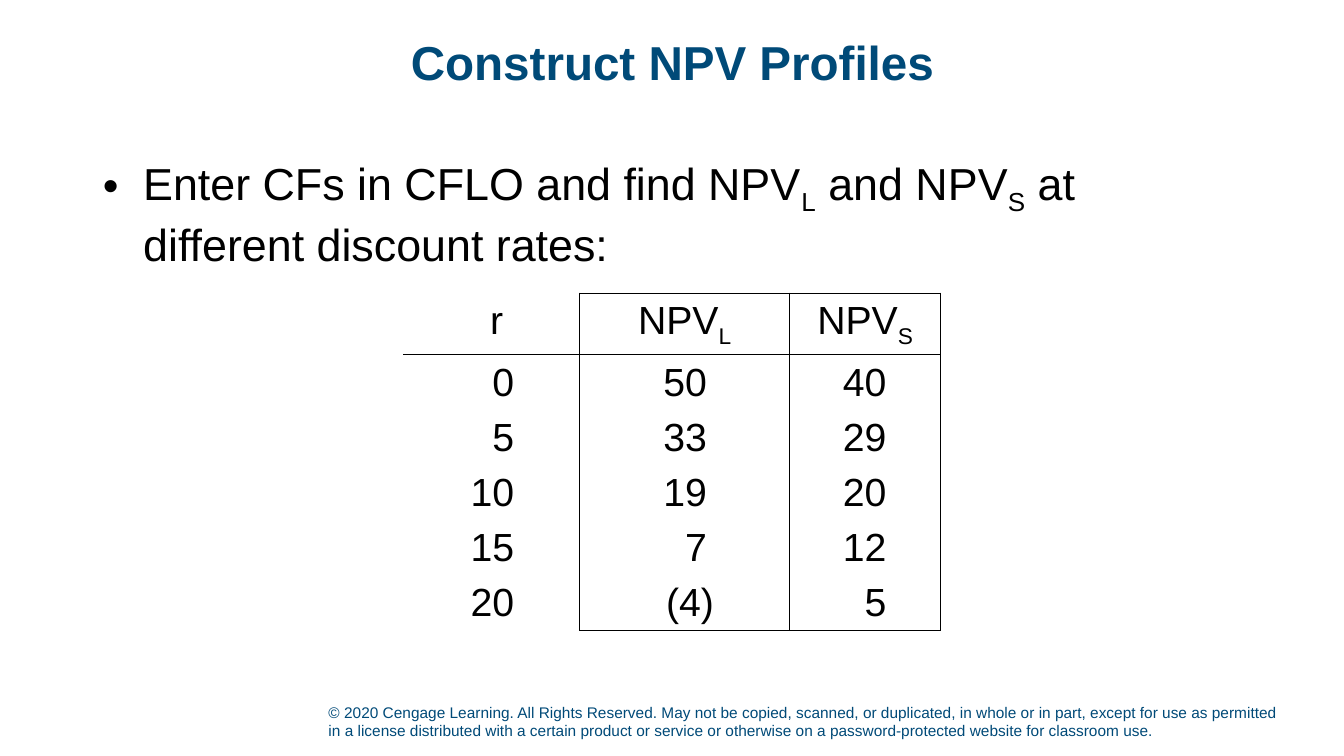
"""Build the NPV profiles slide."""
import pptx
import pptx.dml.color
import pptx.enum.text
import pptx.oxml.ns
import pptx.util
from lxml import etree

Inches = pptx.util.Inches
Pt = pptx.util.Pt
Align = pptx.enum.text.PP_ALIGN
Anchor = pptx.enum.text.MSO_ANCHOR
qn = pptx.oxml.ns.qn

BLUE = pptx.dml.color.RGBColor(0x00, 0x4A, 0x78)
BLACK = pptx.dml.color.RGBColor(0x00, 0x00, 0x00)
FONT = "Arial"

COPYRIGHT = (
    "© 2020 Cengage Learning. All Rights Reserved. May not be copied, scanned, "
    "or duplicated, in whole or in part, except for use as permitted in a license "
    "distributed with a certain product or service or otherwise on a "
    "password-protected website for classroom use."
)
PROMPT = ["Enter CFs in CFLO and find NPV", "L", " and NPV", "S", " at different discount rates:"]
HEADINGS = [["r"], ["NPV", "L"], ["NPV", "S"]]
RATE_ROWS = [
    ("0", "50", "40"),
    ("5", "33", "29"),
    ("10", "19", "20"),
    ("15", "7", "12"),
    ("20", "(4)", "5"),
]
COLUMN_WIDTHS = [1.75, 2.08, 1.5]
NUMBER_MARGINS = [0.65, 0.82, 0.54]
PARENTHESIS_HANG = 0.07
HEADING_HEIGHT = 0.6
ROW_HEIGHT = 0.53


def set_values(target, values):
    """Set each named attribute of the target."""
    for name, value in values.items():
        setattr(target, name, value)


def write(para, pieces, size, color, bold=False):
    """Write the pieces as runs, with every second piece as a subscript."""
    for index, piece in enumerate(pieces):
        span = para.add_run()
        span.text = piece
        set_values(span.font, {"name": FONT, "size": Pt(size), "bold": bold})
        span.font.color.rgb = color
        if index % 2:
            span.font._element.set("baseline", "-25000")


def place(box, left, top, width, height):
    """Move and size a box, in inches."""
    set_values(box, {"left": Inches(left), "top": Inches(top),
                     "width": Inches(width), "height": Inches(height)})


def add_title(page):
    """Fill the title placeholder."""
    title = page.shapes.title
    place(title, 0.92, 0.15, 11.5, 1)
    title.text_frame.vertical_anchor = Anchor.MIDDLE
    para = title.text_frame.paragraphs[0]
    set_values(para, {"alignment": Align.CENTER, "line_spacing": 0.9})
    write(para, ["Construct NPV Profiles"], 34, BLUE, True)


def add_prompt(page):
    """Fill the body placeholder with the bulleted instruction."""
    body = page.placeholders[1]
    place(body, 0.92, 1.44, 11.5, 1.24)
    set_values(body.text_frame, {"margin_top": Inches(0.1), "word_wrap": True,
                                 "auto_size": pptx.enum.text.MSO_AUTO_SIZE.NONE})
    para = body.text_frame.paragraphs[0]
    properties = para._p.get_or_add_pPr()
    properties.set("marL", str(Inches(0.4)))
    properties.set("indent", str(Inches(-0.4)))
    etree.SubElement(properties, qn("a:buFont")).set("typeface", FONT)
    etree.SubElement(properties, qn("a:buChar")).set("char", "•")
    set_values(para, {"space_before": Pt(0), "space_after": Pt(6)})
    write(para, PROMPT, 32, BLACK)


def add_copyright(page):
    """Add the copyright line at the foot."""
    box = page.shapes.add_textbox(Inches(3.16), Inches(6.89), Inches(9.63), Inches(0.5))
    set_values(box.text_frame, {"word_wrap": True, "vertical_anchor": Anchor.BOTTOM})
    write(box.text_frame.paragraphs[0], [COPYRIGHT], 11, BLUE)


def set_borders(cell, sides):
    """Draw the cell sides that are marked true and clear the others."""
    properties = cell._tc.get_or_add_tcPr()
    for index, (tag, drawn) in enumerate(sides.items()):
        line = etree.Element(qn(f"a:{tag}"), w=str(Pt(1)))
        if drawn:
            fill = etree.SubElement(line, qn("a:solidFill"))
            etree.SubElement(fill, qn("a:srgbClr")).set("val", str(BLACK))
        else:
            etree.SubElement(line, qn("a:noFill"))
        properties.insert(index, line)


def fill_cell(cell, pieces, margins, alignment):
    """Write one table cell with its left and right margins in inches."""
    cell.fill.background()
    set_values(cell, {"margin_left": Inches(margins[0]), "margin_right": Inches(margins[1]),
                      "margin_top": Inches(0.06), "margin_bottom": Inches(0.02)})
    para = cell.text_frame.paragraphs[0]
    para.alignment = alignment
    write(para, pieces, 28, BLACK)


def add_rate_table(page):
    """Add the table of net present values by discount rate."""
    row_count = len(RATE_ROWS) + 1
    height = HEADING_HEIGHT + ROW_HEIGHT * len(RATE_ROWS)
    frame = page.shapes.add_table(row_count, len(COLUMN_WIDTHS), Inches(4), Inches(2.91),
                                  Inches(sum(COLUMN_WIDTHS)), Inches(height))
    table = frame.table
    set_values(table, {"first_row": False, "horz_banding": False})
    for column, width in zip(table.columns, COLUMN_WIDTHS):
        column.width = Inches(width)
    for number, row in enumerate(table.rows):
        row.height = Inches(ROW_HEIGHT if number else HEADING_HEIGHT)
        for index, cell in enumerate(row.cells):
            if number:
                value = RATE_ROWS[number - 1][index]
                hang = PARENTHESIS_HANG if value.endswith(")") else 0
                margins = (0.1, NUMBER_MARGINS[index] - hang)
                fill_cell(cell, [value], margins, Align.RIGHT)
            else:
                margins = (0.1 if index else 0.2, 0.1)
                fill_cell(cell, HEADINGS[index], margins, Align.CENTER)
            in_values = index > 0
            set_borders(cell, {
                "lnL": in_values,
                "lnR": True,
                "lnT": number == 1 or (number == 0 and in_values),
                "lnB": number == 0 or (number == row_count - 1 and in_values),
            })


def main():
    """Build and save the deck."""
    deck = pptx.Presentation()
    set_values(deck, {"slide_width": Inches(13.33), "slide_height": Inches(7.5)})
    page = deck.slides.add_slide(deck.slide_layouts[1])
    add_copyright(page)
    add_title(page)
    add_prompt(page)
    add_rate_table(page)
    deck.save("out.pptx")


if __name__ == "__main__":
    main()
